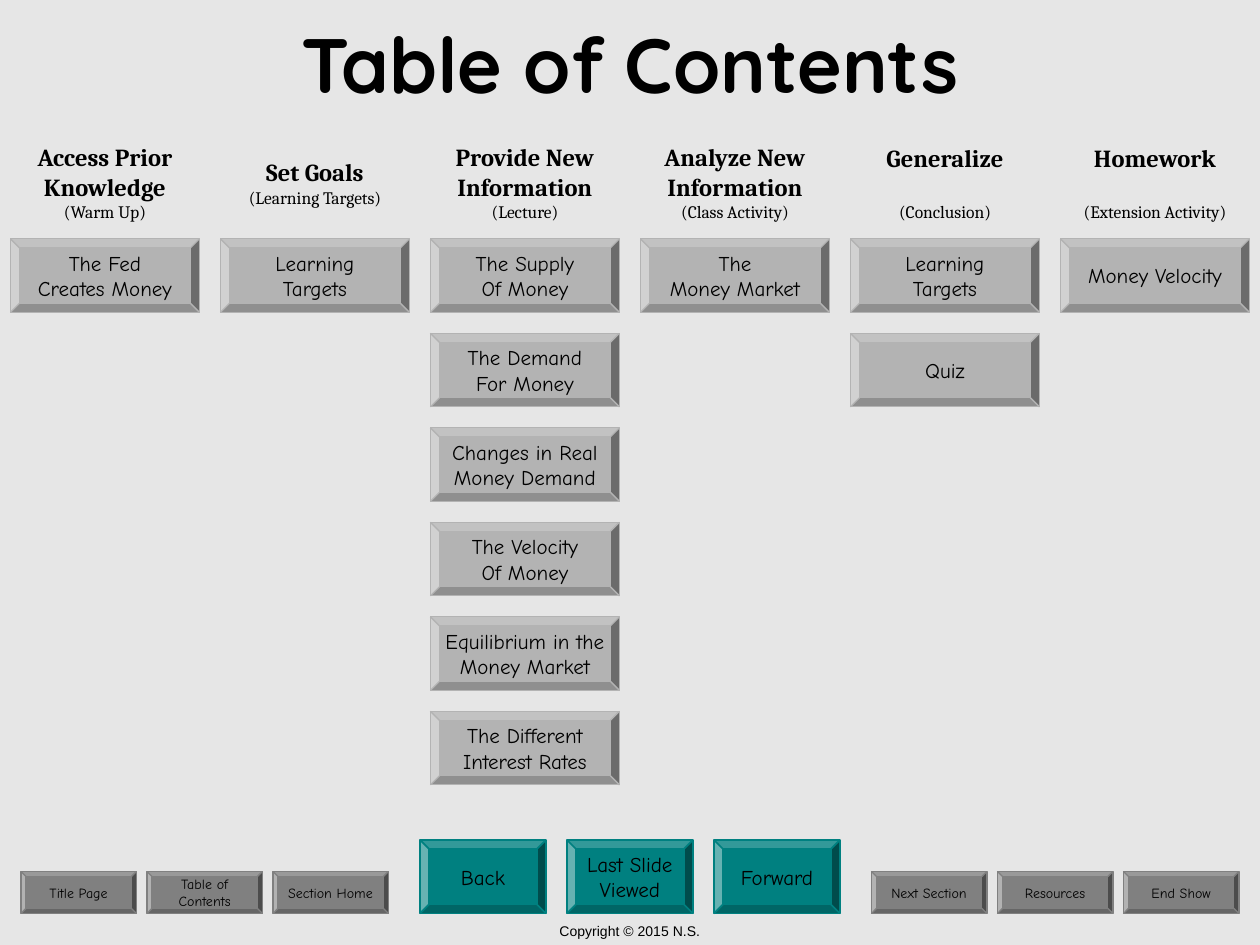
import pptx
import pptx.dml.color
import pptx.enum.shapes
import pptx.enum.text
import pptx.util

RGBColor = pptx.dml.color.RGBColor
BLACK = RGBColor(0x00, 0x00, 0x00)
PAPER = RGBColor(0xE6, 0xE6, 0xE6)
SILVER = RGBColor(0xB3, 0xB3, 0xB3)
GRAY = RGBColor(0x80, 0x80, 0x80)
TEAL = RGBColor(0x00, 0x80, 0x80)

PX = 9525
SLIDE_WIDTH, SLIDE_HEIGHT = 960, 720
COLUMN_LEFT, COLUMN_PITCH, COLUMN_WIDTH = 8, 160, 144
TOPIC_TOP, TOPIC_PITCH, TOPIC_HEIGHT = 182, 72, 56

COLUMNS = [
    ("Access Prior Knowledge", "(Warm Up)", ["The Fed\nCreates Money"]),
    ("Set Goals", "(Learning Targets)", ["Learning\nTargets"]),
    ("Provide New Information", "(Lecture)", [
        "The Supply\nOf Money",
        "The Demand\nFor Money",
        "Changes in Real\nMoney Demand",
        "The Velocity\nOf Money",
        "Equilibrium in the\nMoney Market",
        "The Different\nInterest Rates",
    ]),
    ("Analyze New Information", "(Class Activity)", ["The\nMoney Market"]),
    ("Generalize", "(Conclusion)", ["Learning\nTargets", "Quiz"]),
    ("Homework", "(Extension Activity)", ["Money Velocity"]),
]
SECTION_LINKS = ["Title Page", "Table of\nContents", "Section Home"]
STEP_LINKS = ["Back", "Last Slide\nViewed", "Forward"]
CLOSING_LINKS = ["Next Section", "Resources", "End Show"]


class ContentsSlide:
    """Draws the parts of a contents slide in one shared style."""

    title_font = "Quicksand"
    heading_font = "Cambria"
    button_font = "Comic Neue"
    footer_font = "Arial"

    def __init__(self, deck):
        self.slide = deck.slides.add_slide(deck.slide_layouts[5])
        self.slide.background.fill.solid()
        self.slide.background.fill.fore_color.rgb = PAPER

    def box(self, *lengths):
        return [pptx.util.Emu(length * PX) for length in lengths]

    def format(self, paragraph, font, size, bold=False):
        paragraph.alignment = pptx.enum.text.PP_ALIGN.CENTER
        for run in paragraph.runs:
            run.font.name = font
            run.font.size = pptx.util.Pt(size)
            run.font.bold = bold
            run.font.color.rgb = BLACK

    def title(self, text):
        title = self.slide.shapes.title
        title.left, title.top, title.width, title.height = self.box(0, 0, SLIDE_WIDTH, 96)
        frame = title.text_frame
        frame.text = text
        frame.vertical_anchor = pptx.enum.text.MSO_ANCHOR.MIDDLE
        frame.auto_size = pptx.enum.text.MSO_AUTO_SIZE.NONE
        self.format(frame.paragraphs[0], self.title_font, 44, True)

    def textbox(self, text, left, top, width, height):
        frame = self.slide.shapes.add_textbox(*self.box(left, top, width, height)).text_frame
        frame.word_wrap = True
        frame.auto_size = pptx.enum.text.MSO_AUTO_SIZE.SHAPE_TO_FIT_TEXT
        frame.vertical_anchor = pptx.enum.text.MSO_ANCHOR.MIDDLE
        frame.text = text
        return frame

    def heading(self, stage, activity, left):
        frame = self.textbox(f"{stage}\n{activity}", left, 104, COLUMN_WIDTH, 70)
        stage_line, activity_line = frame.paragraphs
        self.format(stage_line, self.heading_font, 14, True)
        self.format(activity_line, self.heading_font, 10)
        if " " not in stage:
            activity_line.space_before = pptx.util.Pt(16.4)

    def footer(self, text):
        frame = self.textbox(text, 0, 698, SLIDE_WIDTH, 22)
        self.format(frame.paragraphs[0], self.footer_font, 8)

    def button(self, text, left, top, width, height, color, size=12, line_width=0.75):
        button = self.slide.shapes.add_shape(
            pptx.enum.shapes.MSO_SHAPE.BEVEL, *self.box(left, top, width, height))
        button.shadow.inherit = False
        button.fill.solid()
        button.fill.fore_color.rgb = color
        button.line.color.rgb = color
        button.line.width = pptx.util.Pt(line_width)
        frame = button.text_frame
        frame.margin_top = frame.margin_bottom = 0
        frame.word_wrap = False
        frame.vertical_anchor = pptx.enum.text.MSO_ANCHOR.MIDDLE
        frame.text = text
        for paragraph in frame.paragraphs:
            self.format(paragraph, self.button_font, size)

    def button_row(self, labels, left, pitch, *style):
        for index, label in enumerate(labels):
            self.button(label, left + index * pitch, *style)


def main():
    deck = pptx.Presentation()
    deck.slide_width = pptx.util.Emu(SLIDE_WIDTH * PX)
    deck.slide_height = pptx.util.Emu(SLIDE_HEIGHT * PX)

    contents = ContentsSlide(deck)
    contents.footer("Copyright © 2015 N.S.")
    contents.button_row(STEP_LINKS, 320, 112, 640, 96, 56, TEAL, 12, 1)
    for links, left in ((SECTION_LINKS, 16), (CLOSING_LINKS, 664)):
        contents.button_row(links, left, 96, 664, 88, 32, GRAY, 8)
    contents.title("Table of Contents")

    for column, (stage, activity, topics) in enumerate(COLUMNS):
        left = COLUMN_LEFT + column * COLUMN_PITCH
        contents.heading(stage, activity, left)
        for row, topic in enumerate(topics):
            top = TOPIC_TOP + row * TOPIC_PITCH
            contents.button(topic, left, top, COLUMN_WIDTH, TOPIC_HEIGHT, SILVER)

    deck.save("out.pptx")


if __name__ == "__main__":
    main()
